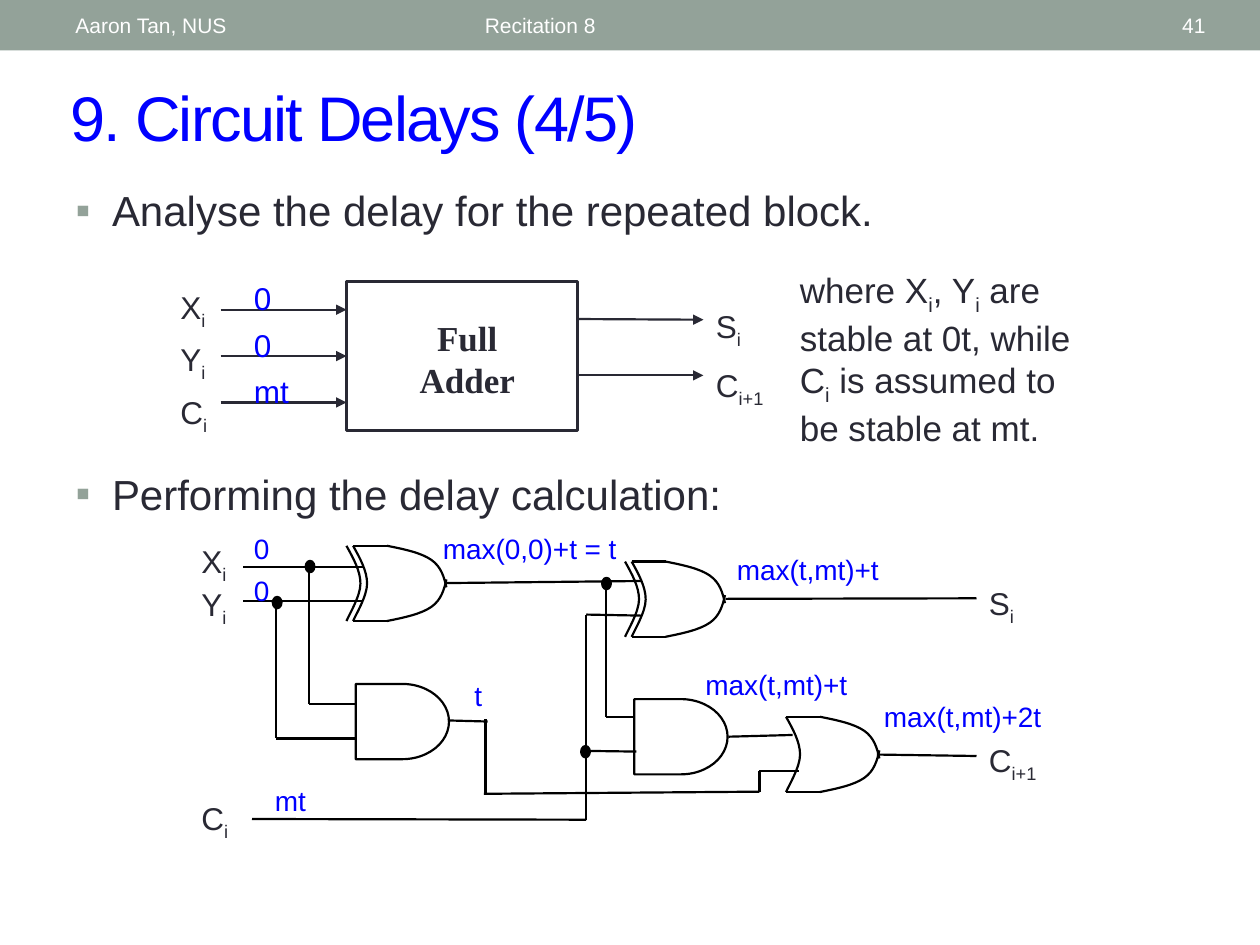
from typing import NamedTuple

from lxml import etree
from pptx import Presentation
from pptx.dml.color import RGBColor
from pptx.enum.shapes import MSO_CONNECTOR, MSO_SHAPE
from pptx.enum.text import MSO_ANCHOR, MSO_AUTO_SIZE, PP_ALIGN
from pptx.oxml.ns import qn
from pptx.util import Pt

STRAIGHT = MSO_CONNECTOR.STRAIGHT
RECT, OVAL = MSO_SHAPE.RECTANGLE, MSO_SHAPE.OVAL
DELAY = MSO_SHAPE.FLOWCHART_DELAY
LEFT, CENTER, RIGHT = PP_ALIGN.LEFT, PP_ALIGN.CENTER, PP_ALIGN.RIGHT
TOP, MIDDLE = MSO_ANCHOR.TOP, MSO_ANCHOR.MIDDLE
BLUE, INK, SAGE, BLACK, WHITE = "0000FF", "292934", "93A299", "000000", "FFFFFF"


class Label(NamedTuple):
    """Text with its box; parts between bars are subscripts."""
    text: str
    left: float
    top: float
    width: float
    height: float
    size: float = 16
    color: str = BLUE
    align: PP_ALIGN = LEFT
    anchor: MSO_ANCHOR = TOP
    font: str = "Arial"
    bold: bool = False
    gap: float = 0


class Wire(NamedTuple):
    x1: float
    y1: float
    x2: float
    y2: float


class Gate(NamedTuple):
    left: float
    top: float
    xor: bool


HEADER = [
    Label("Aaron Tan, NUS", 36, 1.5, 228, 26, 12, WHITE, anchor=MIDDLE),
    Label("Recitation 8", 270, 1.5, 324, 26, 12, WHITE, anchor=MIDDLE),
    Label("41", 628, 1.5, 68, 26, 12, WHITE, RIGHT, MIDDLE),
]
TITLE = Label("9. Circuit Delays (4/5)", 33, 41, 663, 50.4, 36, anchor=MIDDLE)
POINTS = [
    Label("Analyse the delay for the repeated block.", 36, 102, 648, 48, 24, INK),
    Label("Performing the delay calculation:", 36, 264, 648, 48, 24, INK),
]
LABELS = [
    Label("where X|i|, Y|i| are stable at 0t, while C|i| is assumed to be stable at mt.",
          450, 150, 186, 114, 20, INK),
    Label("Full\nAdder", 222, 177.4, 90, 55.5, 20, INK, CENTER,
          font="Times New Roman", bold=True),
    Label("X|i|\nY|i|\nC|i|", 96, 161, 36, 85, 18, INK, gap=5.4),
    Label("S|i|\nC|i+1|", 402, 172, 48, 61, 18, INK, gap=9),
    Label("0", 138, 156, 24, 29, 18),
    Label("0", 138, 182.6, 24, 29, 18),
    Label("mt", 138, 208.8, 36, 29, 18),
    Label("X|i|\nY|i|", 108, 306, 30, 43, 18, INK),
    Label("C|i|", 108, 453, 38, 27, 18, INK),
    Label("S|i|", 558, 330.2, 42, 27, 18, INK),
    Label("C|i+1|", 558, 420, 60, 27, 18, INK),
    Label("0", 138, 300, 24, 27),
    Label("0", 138, 324, 24, 27),
    Label("mt", 150, 444, 36, 27),
    Label("t", 264, 384, 19, 27),
    Label("max(0,0)+t = t", 246, 300, 119, 27),
    Label("max(t,mt)+t", 414, 312, 114, 27),
    Label("max(t,mt)+t", 396, 378, 114, 27),
    Label("max(t,mt)+2t", 498, 396, 126, 27),
]
INPUTS = [Wire(126, y, 198, y) for y in (177, 203.5, 230)]
OUTPUTS = [Wire(330, 182.3, 402, 182.7), Wire(330, 214.5, 402, 214.5)]
WIRES = [
    Wire(139, 324, 207.4, 324), Wire(139, 343.6, 207.4, 343.6),
    Wire(176.6, 324, 176.6, 402.5), Wire(176.6, 402.5, 203.2, 402.5),
    Wire(157.7, 343.6, 157.7, 422), Wire(157.7, 422, 203.2, 422),
    Wire(254.9, 333.2, 366.5, 332), Wire(255.9, 411.7, 278.6, 412.3),
    Wire(277.4, 453.6, 277.4, 411.1), Wire(276.5, 453.6, 434, 452.4),
    Wire(434, 452.4, 434, 440.8), Wire(434, 440.8, 456.5, 440.8),
    Wire(144, 468, 335, 468.4), Wire(335, 351.4, 335, 468.4),
    Wire(335, 351.2, 366.5, 351.8), Wire(335, 429.1, 363.6, 429.5),
    Wire(346.5, 331.2, 346.5, 409.7), Wire(346.5, 409.7, 361.7, 409.7),
    Wire(414.7, 342.2, 558, 341.9), Wire(416.2, 421, 452.9, 420),
    Wire(501.1, 431.2, 558, 432),
]
DOTS = [(155.9, 341.1), (174.7, 320.5), (332.1, 426.3), (344.1, 330.2)]
ANDS = [(203.3, 390.8), (362.5, 399.5)]
ORS = [Gate(201.8, 311.9, True), Gate(361, 320.9, True), Gate(449.2, 409.6, False)]
TALL, FLAT = 43, 19.3
BACK = [(0, 0), (4, 7.2), (8, 14.4), (8, 21.6), (8, 28.8), (1.5, 39.4), (0, TALL)]
NOSE = [(FLAT, 0), (29.4, 2), (38.8, 4), (44.6, 8), (50.4, 12), (52, 18), (53.3, 23.8)]


def rgb(code: str) -> RGBColor:
    return RGBColor.from_string(code)


def fill_text(shape, label: Label) -> None:
    frame = shape.text_frame
    frame.auto_size, frame.word_wrap = MSO_AUTO_SIZE.NONE, True
    frame.vertical_anchor = label.anchor
    frame.text = label.text
    for row, para in enumerate(frame.paragraphs):
        para.alignment = label.align
        if row and label.gap:
            para.space_before = Pt(label.gap)
        first, *rest = [part for part in para.text.split("|") if part]
        para.runs[0].text = first
        for part in rest:
            para.add_run().text = part
        for spot, run in enumerate(para.runs):
            font = run.font
            font.name, font.size, font.bold = label.font, Pt(label.size), label.bold
            font.color.rgb = rgb(label.color)
            if spot % 2:
                run._r.get_or_add_rPr().set("baseline", "-25000")


def put_text(slide, label: Label) -> None:
    fill_text(slide.shapes.add_textbox(*map(Pt, label[1:5])), label)


def put_holder(shape, label: Label) -> None:
    shape.left, shape.top, shape.width, shape.height = map(Pt, label[1:5])
    fill_text(shape, label)


def set_bullet(shape) -> None:
    props = shape.text_frame.paragraphs[0]._p.get_or_add_pPr()
    props.set("marL", str(Pt(20.8)))
    props.set("indent", str(-Pt(20.8)))
    tint = etree.SubElement(props, qn("a:buClr"))
    etree.SubElement(tint, qn("a:srgbClr"), val=SAGE)
    etree.SubElement(props, qn("a:buChar"), char="▪")


def style(shape, fill: str = "", line: str = BLACK, width: float = 1.25) -> None:
    shape.shadow.inherit = False
    if fill:
        shape.fill.solid()
        shape.fill.fore_color.rgb = rgb(fill)
    else:
        shape.fill.background()
    shape.line.color.rgb = rgb(line)
    shape.line.width = Pt(width)


def put_shape(slide, kind: MSO_SHAPE, left: float, top: float, width: float, height: float):
    return slide.shapes.add_shape(kind, Pt(left), Pt(top), Pt(width), Pt(height))


def put_wire(slide, wire: Wire, color: str = BLACK, arrow: bool = False):
    link = slide.shapes.add_connector(STRAIGHT, *map(Pt, wire))
    link.line.color.rgb = rgb(color)
    link.line.width = Pt(1.25)
    if arrow:
        etree.SubElement(link.line._get_or_add_ln(), qn("a:tailEnd"), type="triangle")
    etree.SubElement(link._element.spPr, qn("a:effectLst"))
    return link


def put_curve(slide, knots: list, left: float, top: float) -> None:
    """Draw joined cubic Bezier curves, three knots to a curve after the first."""
    start, *rest = [(Pt(left + x), Pt(top + y)) for x, y in knots]
    pen = slide.shapes.build_freeform(*start, scale=1.0)
    pen.add_line_segments(rest, close=False)
    shape = pen.convert_to_shape()
    lines = list(shape._element.iter(qn("a:lnTo")))
    route = lines[0].getparent()
    for at in range(0, len(lines), 3):
        bend = etree.SubElement(route, qn("a:cubicBezTo"))
        for line in lines[at:at + 3]:
            bend.append(line[0])
            route.remove(line)
    style(shape)


def put_gate(slide, gate: Gate) -> None:
    left, top, xor = gate
    put_curve(slide, BACK, left, top)
    if xor:
        put_curve(slide, BACK, left - 3.8, top)
    for y in (top, top + TALL):
        put_wire(slide, Wire(left, y, left + FLAT, y))
    put_curve(slide, NOSE, left, top)
    put_curve(slide, [(x, TALL - y) for x, y in NOSE], left, top)


def main() -> None:
    deck = Presentation()
    deck.slide_width, deck.slide_height = Pt(720), Pt(540)
    slide = deck.slides.add_slide(deck.slide_layouts[3])
    bar = put_shape(slide, RECT, 0, 0, 720, 28.8)
    style(bar, SAGE)
    bar.line.fill.background()
    title, *bodies = slide.placeholders
    put_holder(title, TITLE)
    title.text_frame.paragraphs[0].runs[0]._r.get_or_add_rPr().set("spc", "-100")
    for body, point in zip(bodies, POINTS):
        put_holder(body, point)
        set_bullet(body)
    adder = put_shape(slide, RECT, 198, 161, 132, 85)
    style(adder, line=INK, width=1.5)
    links = [put_wire(slide, wire, INK, True) for wire in INPUTS + OUTPUTS]
    links[1].end_connect(adder, 1)
    for wire in WIRES:
        put_wire(slide, wire)
    for left, top in ANDS:
        style(put_shape(slide, DELAY, left, top, 53.3, TALL))
    for gate in ORS:
        put_gate(slide, gate)
    for left, top in DOTS:
        style(put_shape(slide, OVAL, left, top, 5, 6.5), BLACK)
    for label in HEADER + LABELS:
        put_text(slide, label)
    deck.save("out.pptx")


if __name__ == "__main__":
    main()
